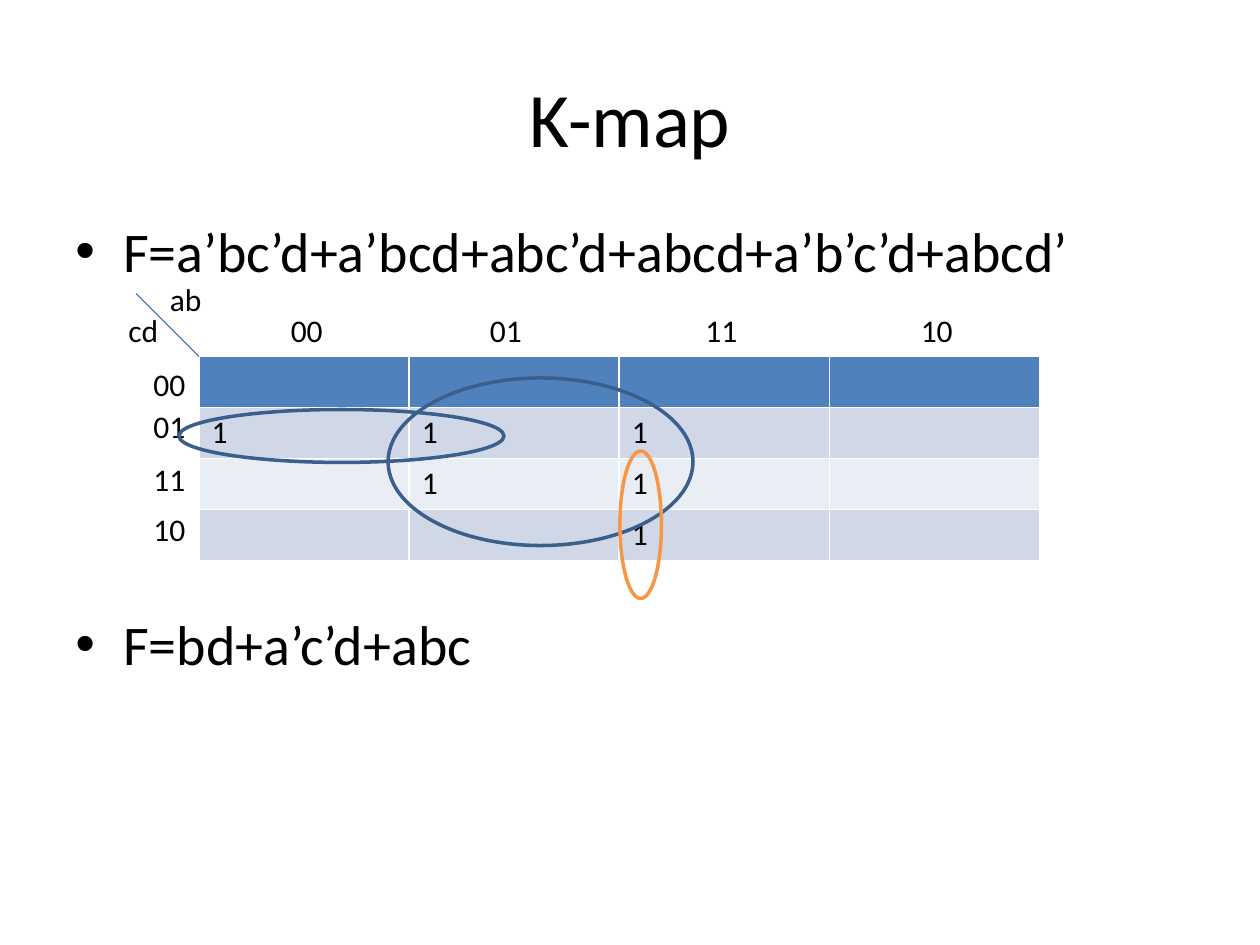
from lxml.etree import SubElement
from pptx import Presentation
from pptx.dml.color import RGBColor
from pptx.enum.shapes import MSO_CONNECTOR, MSO_SHAPE
from pptx.enum.text import MSO_ANCHOR, MSO_AUTO_SIZE, PP_ALIGN
from pptx.oxml.ns import qn
from pptx.util import Inches, Pt


def color(code):
    return RGBColor.from_string(code)


def write(para, text, size=18, tint="000000", align=None, before=None):
    run = para.add_run()
    run.text = text
    run.font.name = "Calibri"
    run.font.size = Pt(size)
    run.font.color.rgb = color(tint)
    if align is not None:
        para.alignment = align
    if before is not None:
        para.space_before = Pt(before)


def bullet(para, indent):
    props = para._p.get_or_add_pPr()
    props.set("marL", str(indent))
    props.set("indent", str(-indent))
    SubElement(props, qn("a:buFont")).set("typeface", "Arial")
    SubElement(props, qn("a:buChar")).set("char", "•")


class Board:
    blue = "3A5F8C"
    orange = "F79646"
    head = "4F81BD"
    bands = ("D0D8E8", "E9EDF4")

    def __init__(self, slide):
        self.slide = slide
        self.shapes = slide.shapes

    def title(self, text, *box):
        shape = self.shapes.title
        shape.left, shape.top, shape.width, shape.height = map(Inches, box)
        frame = shape.text_frame
        frame.vertical_anchor = MSO_ANCHOR.MIDDLE
        write(frame.paragraphs[0], text, size=44, align=PP_ALIGN.CENTER)

    def points(self, items, gap, *box):
        """Add bulleted lines, with a gap in points between them."""
        frame = self.shapes.add_textbox(*map(Inches, box)).text_frame
        frame.word_wrap = True
        for i, text in enumerate(items):
            para = frame.add_paragraph() if i else frame.paragraphs[0]
            write(para, text, size=32, before=gap if i else 0)
            bullet(para, Inches(0.38))

    def label(self, text, left, top, width=0.46):
        box = self.shapes.add_textbox(*map(Inches, (left, top, width, 0.4)))
        frame = box.text_frame
        frame.word_wrap = False
        frame.auto_size = MSO_AUTO_SIZE.SHAPE_TO_FIT_TEXT
        write(frame.paragraphs[0], text)

    def grid(self, rows, *box):
        table = self.shapes.add_table(
            len(rows), len(rows[0]), *map(Inches, box)).table
        for r, row in enumerate(rows):
            for c, text in enumerate(row):
                cell = table.cell(r, c)
                cell.fill.solid()
                tint = self.bands[(r - 1) % 2] if r else self.head
                cell.fill.fore_color.rgb = color(tint)
                if text.strip():
                    write(cell.text_frame.paragraphs[0], text)

    def line(self, *ends):
        line = self.shapes.add_connector(
            MSO_CONNECTOR.STRAIGHT, *map(Inches, ends))
        line.line.color.rgb = color("4B7EBC")
        line.line.width = Pt(0.75)
        SubElement(line._element.spPr, qn("a:effectLst"))

    def loop(self, tint, *box):
        """Add an unfilled ellipse around a group of ones."""
        oval = self.shapes.add_shape(MSO_SHAPE.OVAL, *map(Inches, box))
        oval.shadow.inherit = False
        oval.fill.background()
        oval.line.color.rgb = color(tint)
        oval.line.width = Pt(2)


def main():
    deck = Presentation()
    deck.slide_width, deck.slide_height = Inches(10), Inches(7.5)
    board = Board(deck.slides.add_slide(deck.slide_layouts[5]))

    board.title("K-map", 0.5, 0.3, 9, 1.25)
    board.points(["F=a’bc’d+a’bcd+abc’d+abcd+a’b’c’d+abcd’",
                  "F=bd+a’c’d+abc"], 186, 0.5, 1.67, 9, 4.95)
    board.grid(["    ", "111 ", " 11 ", "  1 "], 1.58, 2.83, 6.67, 1.62)

    codes = ("00", "01", "11", "10")
    for code, left, top in zip(codes, (2.21, 3.79, 5.5, 7.21),
                               (2.85, 3.18, 3.6, 4)):
        board.label(code, left, 2.42)
        board.label(code, 1.12, top)
    board.line(1.08, 2.33, 1.58, 2.83)
    board.label("ab", 1.25, 2.17)
    board.label("cd", 0.92, 2.42, width=0.44)

    board.loop(board.blue, 1.42, 3.25, 2.58, 0.42)
    board.loop(board.blue, 3.08, 3, 2.42, 1.33)
    board.loop(board.orange, 4.92, 3.58, 0.33, 1.17)
    deck.save("out.pptx")


if __name__ == "__main__":
    main()
